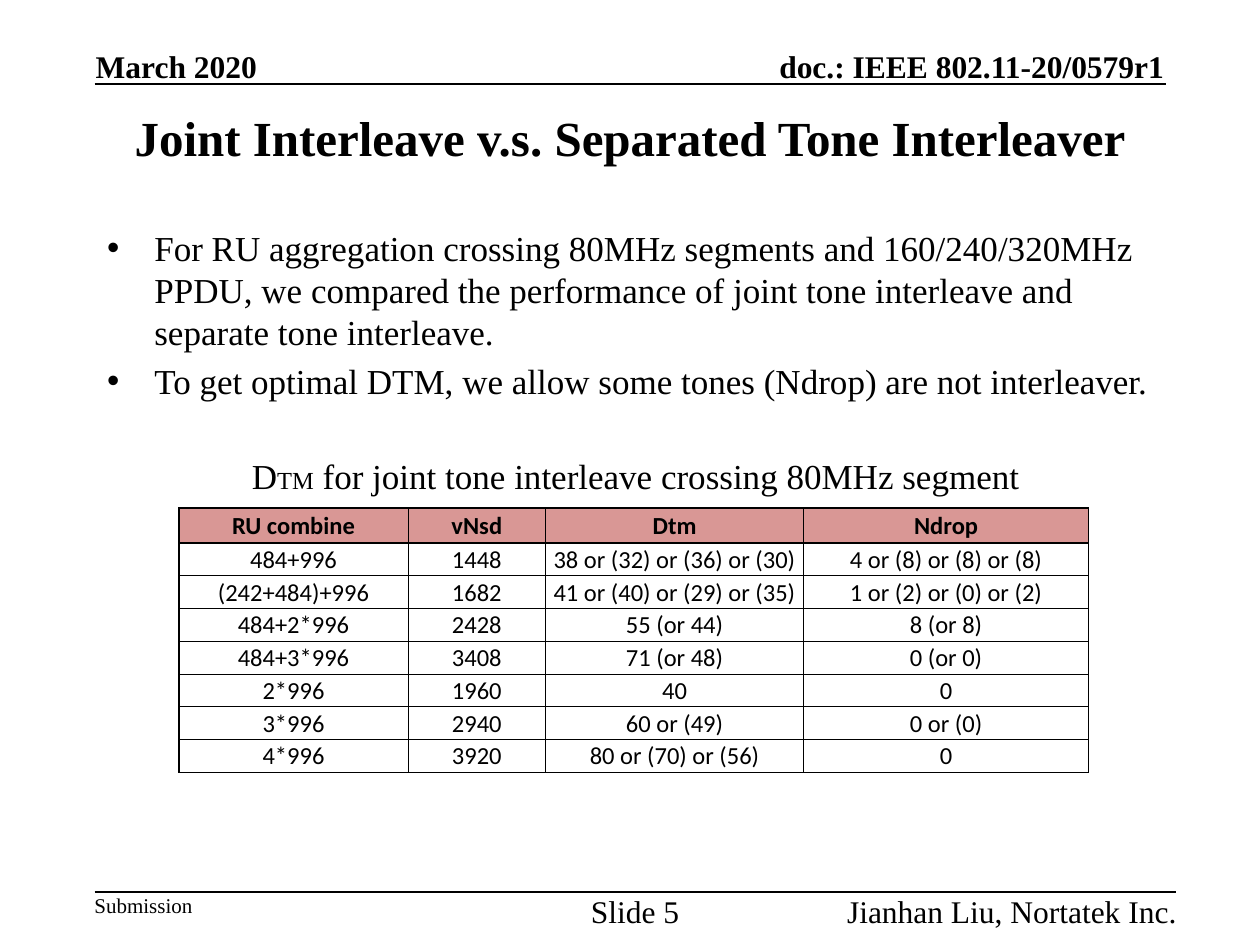
"""Build the slide comparing joint and separated tone interleavers."""
from dataclasses import dataclass

import pptx
import pptx.dml.color
import pptx.enum.shapes
import pptx.enum.text
import pptx.oxml
import pptx.oxml.ns
import pptx.shapes.placeholder
import pptx.slide
import pptx.table
import pptx.text.text
import pptx.util

BLACK = pptx.dml.color.RGBColor(0x00, 0x00, 0x00)
ROSE = pptx.dml.color.RGBColor(0xD9, 0x97, 0x95)
SERIF, SANS = "Times New Roman", "Calibri"
ALIGN = pptx.enum.text.PP_ALIGN
ANCHOR = pptx.enum.text.MSO_ANCHOR
AUTO = pptx.enum.text.MSO_AUTO_SIZE

COLUMNS, ROWS, UNIT = 40, 30, 0.25
LEFT, CONTENT = 3, 34
HEADER_TOP, HEADER_LINE, FOOTER_LINE = 1.48, 2.66, 28.32
LINE_HEIGHT = 1.2

TITLE = "Joint Interleave v.s. Separated Tone Interleaver"
BULLETS = (
    "For RU aggregation crossing 80MHz segments and 160/240/320MHz PPDU, "
    "we compared the performance of joint tone interleave and separate tone interleave.",
    "To get optimal DTM, we allow some tones (Ndrop) are not interleaver.",
)
CAPTION = (("D", 20), ("TM", 14), (" for joint tone interleave crossing 80MHz segment", 20))
TABLE = (
    ("RU combine", "vNsd", "Dtm", "Ndrop"),
    ("484+996", "1448", "38 or (32) or (36) or (30)", "4 or (8) or (8) or (8)"),
    ("(242+484)+996", "1682", "41 or (40) or (29) or (35)", "1 or (2) or (0) or (2)"),
    ("484+2*996", "2428", "55 (or 44)", "8 (or 8)"),
    ("484+3*996", "3408", "71 (or 48)", "0 (or 0)"),
    ("2*996", "1960", "40", "0"),
    ("3*996", "2940", "60 or (49)", "0 or (0)"),
    ("4*996", "3920", "80 or (70) or (56)", "0"),
)
COLUMN_WIDTHS = (7.28, 4.36, 8.2, 9.04)
HEADER_HEIGHT, ROW_HEIGHT = 1.12, 1.04


@dataclass(frozen=True)
class Box:
    """A rectangle in grid units."""

    left: float
    top: float
    width: float
    height: float

    def lengths(self) -> tuple[pptx.util.Length, ...]:
        """Return the rectangle as slide lengths."""
        return tuple(grid(n) for n in (self.left, self.top, self.width, self.height))


@dataclass(frozen=True)
class Label:
    """A running header or footer text."""

    text: str
    box: Box
    align: ALIGN = ALIGN.LEFT
    anchor: ANCHOR = ANCHOR.TOP
    size: float = 18
    bold: bool = False


LABELS = (
    Label("doc.: IEEE 802.11-20/0579r1", Box(22.6, HEADER_TOP, 14.36, LINE_HEIGHT),
          ALIGN.RIGHT, ANCHOR.BOTTOM, bold=True),
    Label("March 2020", Box(3.04, HEADER_TOP, 5.4, LINE_HEIGHT), anchor=ANCHOR.BOTTOM, bold=True),
    Label("Submission", Box(LEFT, FOOTER_LINE, 3.2, 0.8), size=12),
    Label("Slide 5", Box(18.56, FOOTER_LINE, 3.2, LINE_HEIGHT), ALIGN.CENTER),
    Label("Jianhan Liu, Nortatek Inc.", Box(25.36, FOOTER_LINE, 12, LINE_HEIGHT), ALIGN.RIGHT),
)


def grid(n: float) -> pptx.util.Length:
    """Convert grid units to a slide length."""
    return pptx.util.Inches(n * UNIT)


def format_run(r: pptx.text.text._Run, size: float, bold: bool = False, name: str = SERIF) -> None:
    """Give a run its font."""
    r.font.size, r.font.bold, r.font.name = pptx.util.Pt(size), bold, name
    r.font.color.rgb = BLACK


def fill_placeholder(sp: pptx.shapes.placeholder.SlidePlaceholder, box: Box, text: str,
                     size: float, bold: bool) -> None:
    """Place a placeholder and set its text, one paragraph a line."""
    sp.left, sp.top, sp.width, sp.height = box.lengths()
    tf = sp.text_frame
    tf.text = text
    tf.auto_size = AUTO.NONE
    for p in tf.paragraphs:
        format_run(p.runs[0], size, bold)


def add_label(s: pptx.slide.Slide, label: Label) -> None:
    """Add a header or footer text without margins."""
    tf = s.shapes.add_textbox(*label.box.lengths()).text_frame
    tf.margin_left = tf.margin_right = tf.margin_top = tf.margin_bottom = 0
    tf.word_wrap, tf.auto_size = False, AUTO.NONE
    tf.vertical_anchor = label.anchor
    p = tf.paragraphs[0]
    p.text, p.alignment = label.text, label.align
    format_run(p.runs[0], label.size, label.bold)


def add_rule(s: pptx.slide.Slide, row: float, right: float) -> None:
    """Add a horizontal rule from the left margin."""
    line = s.shapes.add_connector(
        pptx.enum.shapes.MSO_CONNECTOR.STRAIGHT, grid(LEFT), grid(row), grid(right), grid(row))
    line.line.color.rgb, line.line.width = BLACK, pptx.util.Pt(1)
    line._element.spPr.append(pptx.oxml.parse_xml(f'<a:effectLst {pptx.oxml.ns.nsdecls("a")}/>'))


def add_caption(s: pptx.slide.Slide, box: Box) -> None:
    """Add the table caption with its smaller letters."""
    tf = s.shapes.add_textbox(*box.lengths()).text_frame
    tf.word_wrap, tf.auto_size = False, AUTO.SHAPE_TO_FIT_TEXT
    for text, size in CAPTION:
        r = tf.paragraphs[0].add_run()
        r.text = text
        format_run(r, size)


def set_borders(cell: pptx.table._Cell, widths: dict[str, float]) -> None:
    """Draw the cell's sides with the given widths in points."""
    tcPr = cell._tc.get_or_add_tcPr()
    for side, width in widths.items():
        tcPr.append(pptx.oxml.parse_xml(
            f'<a:ln{side} {pptx.oxml.ns.nsdecls("a")} w="{pptx.util.Pt(width)}">'
            f'<a:solidFill><a:srgbClr val="{BLACK}"/></a:solidFill></a:ln{side}>'))


def format_cell(cell: pptx.table._Cell, text: str, header: bool) -> None:
    """Set a cell's text, margins and fill."""
    cell.margin_left = cell.margin_right = cell.margin_top = pptx.util.Inches(0.01)
    cell.margin_bottom = 0
    cell.vertical_anchor = ANCHOR.MIDDLE
    p = cell.text_frame.paragraphs[0]
    p.text, p.alignment = text, ALIGN.CENTER
    format_run(p.runs[0], 14, header, SANS)
    if header:
        cell.fill.solid()
        cell.fill.fore_color.rgb = ROSE
    else:
        cell.fill.background()


def add_tone_table(s: pptx.slide.Slide, left: float, top: float) -> None:
    """Add the table of tone mapping distances."""
    heights = (HEADER_HEIGHT,) + (ROW_HEIGHT,) * (len(TABLE) - 1)
    box = Box(left, top, sum(COLUMN_WIDTHS), sum(heights))
    table = s.shapes.add_table(len(TABLE), len(COLUMN_WIDTHS), *box.lengths()).table
    table.first_row = table.horz_banding = False
    for column, width in zip(table.columns, COLUMN_WIDTHS):
        column.width = grid(width)
    for i, (height, texts) in enumerate(zip(heights, TABLE)):
        table.rows[i].height = grid(height)
        for j, text in enumerate(texts):
            cell = table.cell(i, j)
            set_borders(cell, {
                "L": 1 if j == 0 else 0.5,
                "R": 1 if j == len(texts) - 1 else 0.5,
                "T": 1 if i <= 1 else 0.5,
                "B": 1 if i == 0 else 0.5,
            })
            format_cell(cell, text, i == 0)


def main() -> None:
    """Build and save the slide."""
    prs = pptx.Presentation()
    prs.slide_width, prs.slide_height = grid(COLUMNS), grid(ROWS)
    s = prs.slides.add_slide(prs.slide_layouts[1])
    fill_placeholder(s.shapes.title, Box(LEFT, 3, CONTENT, 2.68), TITLE, 28, True)
    fill_placeholder(s.placeholders[1], Box(LEFT, 7, CONTENT, 19.68), "\n".join(BULLETS), 20, False)
    add_rule(s, HEADER_LINE, LEFT + CONTENT)
    add_rule(s, FOOTER_LINE, 37.32)
    for label in LABELS:
        add_label(s, label)
    add_tone_table(s, 5.68, 16.12)
    add_caption(s, Box(7.6, 14.24, 26.12, 1.76))
    prs.save("out.pptx")


if __name__ == "__main__":
    main()
